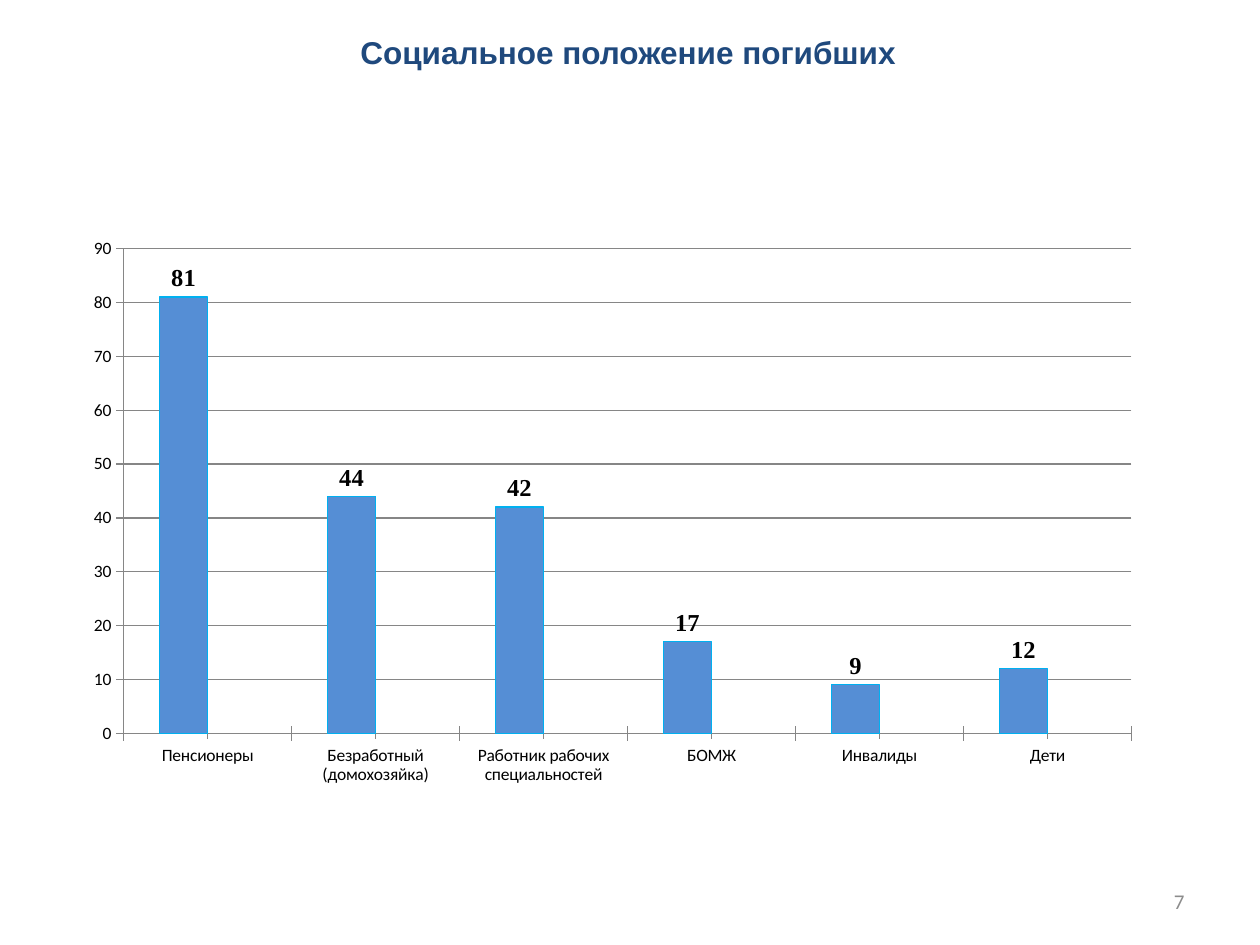
from dataclasses import dataclass

from lxml.etree import SubElement
from pptx import Presentation
from pptx.chart.data import CategoryChartData
from pptx.dml.color import RGBColor
from pptx.enum.chart import (XL_CHART_TYPE, XL_LABEL_POSITION,
                             XL_TICK_LABEL_POSITION, XL_TICK_MARK)
from pptx.enum.text import MSO_ANCHOR, PP_ALIGN
from pptx.oxml.ns import qn
from pptx.util import Inches, Pt


@dataclass(frozen=True)
class Theme:
    title: str = "1F497D"
    muted: str = "8C8C8C"
    grid: str = "868686"
    text: str = "000000"
    bar: str = "558ED5"
    bar_line: str = "00B0F0"
    second_bar: str = "C0504D"
    title_size: int = 18
    label_size: int = 14
    number_size: int = 12
    axis_size: int = 10
    title_font: str = "Arial"
    body_font: str = "Calibri"
    label_font: str = "Times New Roman"


def set_font(font, name, size, color, bold=False):
    font.name, font.size, font.bold = name, Pt(size), bold
    font.color.rgb = RGBColor.from_string(color)


def write_text(frame, text, *, align, anchor=MSO_ANCHOR.TOP, **font_format):
    frame.word_wrap = True
    frame.vertical_anchor = anchor
    paragraph = frame.paragraphs[0]
    paragraph.alignment = align
    run = paragraph.add_run()
    run.text = text
    set_font(run.font, **font_format)


def set_inner_plot_layout(chart, **fractions):
    """Fix the plot rectangle (x, y, w, h) as fractions of the chart."""
    plot_area = chart._chartSpace.chart.plotArea
    for old_layout in plot_area.findall(qn("c:layout")):
        plot_area.remove(old_layout)
    layout = SubElement(plot_area, qn("c:layout"))
    plot_area.insert(0, layout)
    manual = SubElement(layout, qn("c:manualLayout"))
    settings = {"layoutTarget": "inner", "xMode": "edge", "yMode": "edge", **fractions}
    for name, value in settings.items():
        SubElement(manual, qn(f"c:{name}")).set("val", str(value))


class SlideBuilder:
    def __init__(self, slide, theme):
        self.slide = slide
        self.theme = theme

    def text(self, text, left, top, width, height, **text_format):
        box = self.slide.shapes.add_textbox(
            Inches(left), Inches(top), Inches(width), Inches(height))
        write_text(box.text_frame, text, **text_format)

    def column_chart(self, categories, series, left, top, width, height):
        data = CategoryChartData()
        data.categories = categories
        for name, values in series.items():
            data.add_series(name, values)
        chart = self.slide.shapes.add_chart(
            XL_CHART_TYPE.COLUMN_CLUSTERED, Inches(left), Inches(top),
            Inches(width), Inches(height), data).chart
        chart.has_legend = False
        chart.has_title = False
        set_font(chart.font, self.theme.body_font, self.theme.axis_size, self.theme.text)
        set_inner_plot_layout(chart, x=0.046, y=0.026, w=0.94, h=0.885)
        self.style_axes(chart)
        self.style_columns(chart.plots[0])

    def style_axes(self, chart):
        category_axis, value_axis = chart.category_axis, chart.value_axis
        category_axis.major_tick_mark = XL_TICK_MARK.CROSS
        category_axis.minor_tick_mark = XL_TICK_MARK.OUTSIDE
        category_axis.tick_label_position = XL_TICK_LABEL_POSITION.LOW
        value_axis.major_tick_mark = XL_TICK_MARK.OUTSIDE
        value_axis.minor_tick_mark = XL_TICK_MARK.NONE
        value_axis.minimum_scale, value_axis.maximum_scale = 0, 90
        value_axis.major_unit = 10
        value_axis.has_major_gridlines = True
        for element in (category_axis, value_axis, value_axis.major_gridlines):
            element.format.line.color.rgb = RGBColor.from_string(self.theme.grid)
            element.format.line.width = Pt(0.75)

    def style_columns(self, plot):
        theme = self.theme
        plot.gap_width = 150
        plot.overlap = 0
        plot.vary_by_categories = False
        for series, color in zip(plot.series, (theme.bar, theme.second_bar)):
            series.format.fill.solid()
            series.format.fill.fore_color.rgb = RGBColor.from_string(color)
            labels = series.data_labels
            labels.show_value = True
            labels.position = XL_LABEL_POSITION.OUTSIDE_END
            set_font(labels.font, theme.label_font, theme.label_size, theme.text, bold=True)
        line = plot.series[0].format.line
        line.color.rgb = RGBColor.from_string(theme.bar_line)
        line.width = Pt(0.75)


def main():
    theme = Theme()
    presentation = Presentation()
    presentation.slide_width, presentation.slide_height = Inches(10), Inches(7.5)
    slide = presentation.slides.add_slide(presentation.slide_layouts[6])
    builder = SlideBuilder(slide, theme)

    builder.text("7", 7.17, 6.95, 2.33, 0.4, align=PP_ALIGN.RIGHT,
                 anchor=MSO_ANCHOR.MIDDLE, name=theme.body_font,
                 size=theme.number_size, color=theme.muted)
    builder.text("Социальное положение погибших ", 0.04, 0.21, 9.96, 0.71,
                 align=PP_ALIGN.CENTER, name=theme.title_font,
                 size=theme.title_size, color=theme.title, bold=True)

    deaths = {
        "Пенсионеры": 81,
        "Безработный (домохозяйка)": 44,
        "Работник рабочих специальностей": 42,
        "БОМЖ": 17,
        "Инвалиды": 9,
        "Дети": 12,
    }
    series = {"Series 1": list(deaths.values()), "Series 2": [None] * len(deaths)}
    builder.column_chart(list(deaths), series, 0.59, 1.86, 8.51, 4.37)
    presentation.save("out.pptx")


if __name__ == "__main__":
    main()
